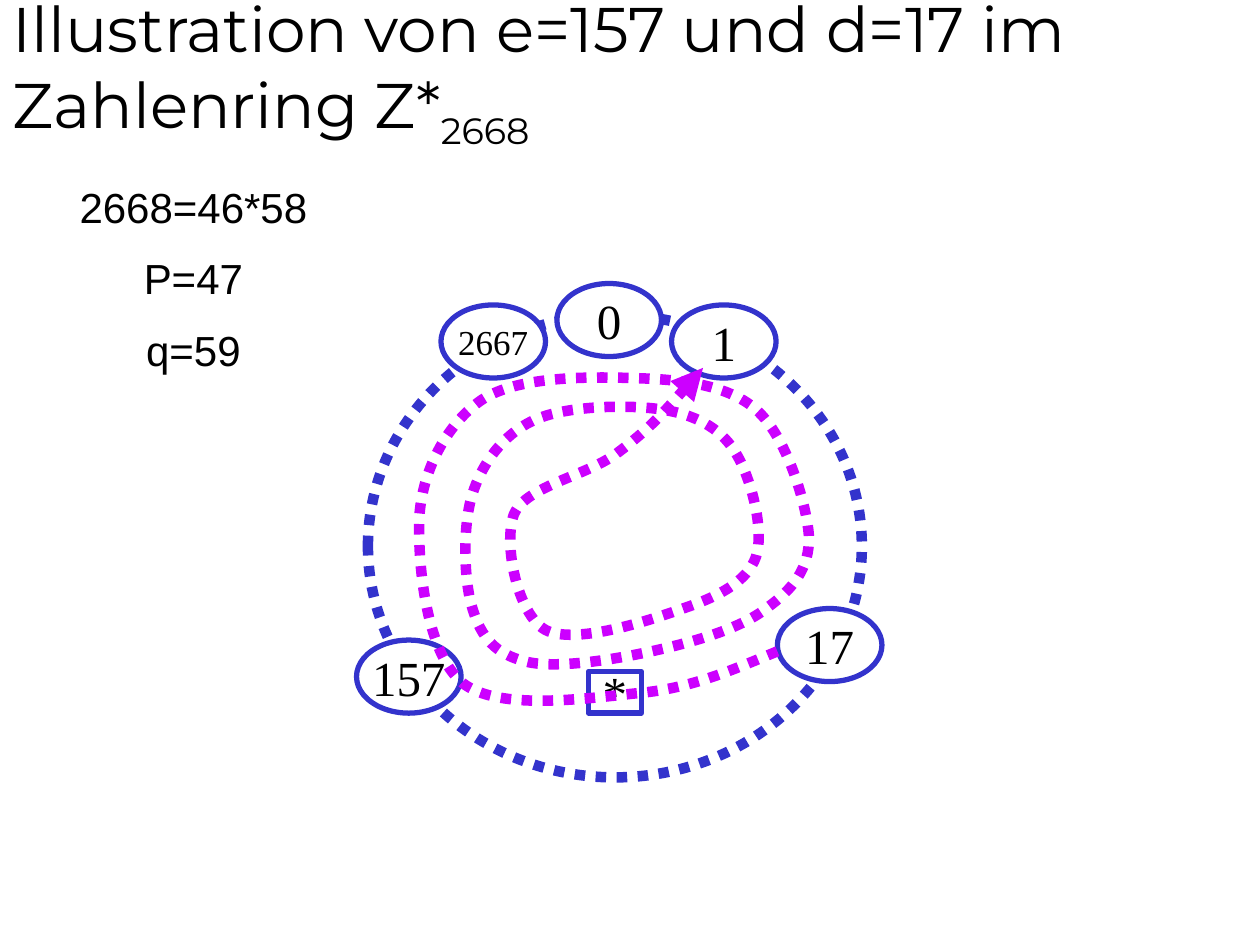
from pptx import Presentation
from pptx.dml.color import RGBColor
from pptx.enum import dml, shapes, text
from pptx.oxml import parse_xml
from pptx.oxml.ns import nsdecls, qn
from pptx.util import Inches, Pt

BLACK = RGBColor(0, 0, 0)
WHITE = RGBColor(255, 255, 255)
BLUE = RGBColor(0x33, 0x33, 0xCC)
PINK = RGBColor(0xCC, 0x00, 0xFF)
SERIF = "Times New Roman"

TITLE = "Illustration von e=157 und d=17 im Zahlenring Z*"
INDEX = "2668"
FACTS = ["2668=46*58", "P=47", "q=59"]

NODE = (0.83, 0.58)
NODES = [  # label, left, top, text size
    ("0", 4.42, 2.25, 28),
    ("1", 5.33, 2.42, 28),
    ("17", 6.17, 4.83, 28),
    ("157", 2.83, 5.08, 28),
    ("2667", 3.5, 2.42, 20),
]

# The spiral is measured in hundredths of an inch.
START = (617, 517)
CURVES = [  # two control points and an end point each
    ((583, 531), (550, 546), (508, 550)),
    ((467, 554), (396, 565), (367, 542)),
    ((338, 518), (331, 446), (333, 408)),
    ((336, 371), (356, 335), (383, 317)),
    ((411, 299), (464, 299), (500, 300)),
    ((536, 301), (576, 304), (600, 325)),
    ((624, 346), (640, 399), (642, 425)),
    ((643, 451), (629, 468), (608, 483)),
    ((588, 499), (549, 510), (517, 517)),
    ((485, 524), (440, 531), (417, 525)),
    ((393, 519), (382, 506), (375, 483)),
    ((368, 461), (367, 417), (375, 392)),
    ((383, 367), (400, 344), (425, 333)),
    ((450, 322), (499, 321), (525, 325)),
    ((551, 329), (571, 339), (583, 358)),
    ((596, 378), (607, 421), (600, 442)),
    ((593, 462), (569, 474), (542, 483)),
    ((514, 493), (456, 512), (433, 500)),
    ((411, 488), (399, 432), (408, 408)),
    ((418, 385), (467, 378), (492, 358)),
    ((517, 339), (538, 315), (558, 292)),
]


def style(run, size, font):
    run.font.size = Pt(size)
    run.font.name = font
    run.font.color.rgb = BLACK


def outline(shape, color, width, dotted=False):
    shape.shadow.inherit = False
    shape.line.color.rgb = color
    shape.line.width = Pt(width)
    if dotted:
        shape.fill.background()
        shape.line.dash_style = dml.MSO_LINE.ROUND_DOT


def add_box(slide, *box):
    frame = slide.shapes.add_textbox(*map(Inches, box)).text_frame
    frame.word_wrap = True
    return frame


def add_node(slide, kind, label, size, *box):
    node = slide.shapes.add_shape(kind, *map(Inches, box))
    outline(node, BLUE, 3)
    node.fill.solid()
    node.fill.fore_color.rgb = WHITE
    frame = node.text_frame
    frame.word_wrap = False
    frame.vertical_anchor = text.MSO_ANCHOR.MIDDLE
    frame.text = label
    par = frame.paragraphs[0]
    par.alignment = text.PP_ALIGN.CENTER
    style(par.runs[0], size, SERIF)


def add_spiral(slide):
    """Build all points as lines, then turn each three into one curve."""
    pen = slide.shapes.build_freeform(*START, scale=Inches(0.01))
    pen.add_line_segments([p for curve in CURVES for p in curve], close=False)
    spiral = pen.convert_to_shape()
    outline(spiral, PINK, 6, dotted=True)
    lines = list(spiral.element.iter(qn("a:lnTo")))
    for i in range(0, len(lines), 3):
        bend = parse_xml(f"<a:cubicBezTo {nsdecls('a')}/>")
        lines[i].addprevious(bend)
        for line in lines[i:i + 3]:
            bend.append(line[0])
            line.getparent().remove(line)
    head = parse_xml(f'<a:tailEnd {nsdecls("a")} type="triangle"/>')
    spiral.element.spPr.find(qn("a:ln")).append(head)


def main():
    deck = Presentation()
    deck.slide_width, deck.slide_height = Inches(10), Inches(7.5)
    slide = deck.slides.add_slide(deck.slide_layouts[6])
    oval = shapes.MSO_SHAPE.OVAL

    title = add_box(slide, 0, 0, 10, 1.25)
    title.vertical_anchor = text.MSO_ANCHOR.BOTTOM
    for words in (TITLE, INDEX):
        run = title.paragraphs[0].add_run()
        run.text = words
        style(run, 36, "Montserrat")
    run._r.get_or_add_rPr().set("baseline", "-25000")

    ring = slide.shapes.add_shape(oval, *map(Inches, (2.92, 2.5, 3.92, 3.67)))
    outline(ring, BLUE, 6, dotted=True)
    for label, left, top, size in NODES:
        add_node(slide, oval, label, size, left, top, *NODE)
    add_node(slide, shapes.MSO_SHAPE.RECTANGLE, "*", 28, 4.67, 5.33, 0.42, 0.33)
    add_spiral(slide)

    facts = add_box(slide, 0, 1.39, 3.07, 1.7)
    facts.text = "\n".join(FACTS)
    for i, par in enumerate(facts.paragraphs):
        par.alignment = text.PP_ALIGN.CENTER
        par.space_before = Pt(12 if i else 0)
        style(par.runs[0], 24, "Arial")

    deck.save("out.pptx")


if __name__ == "__main__":
    main()
